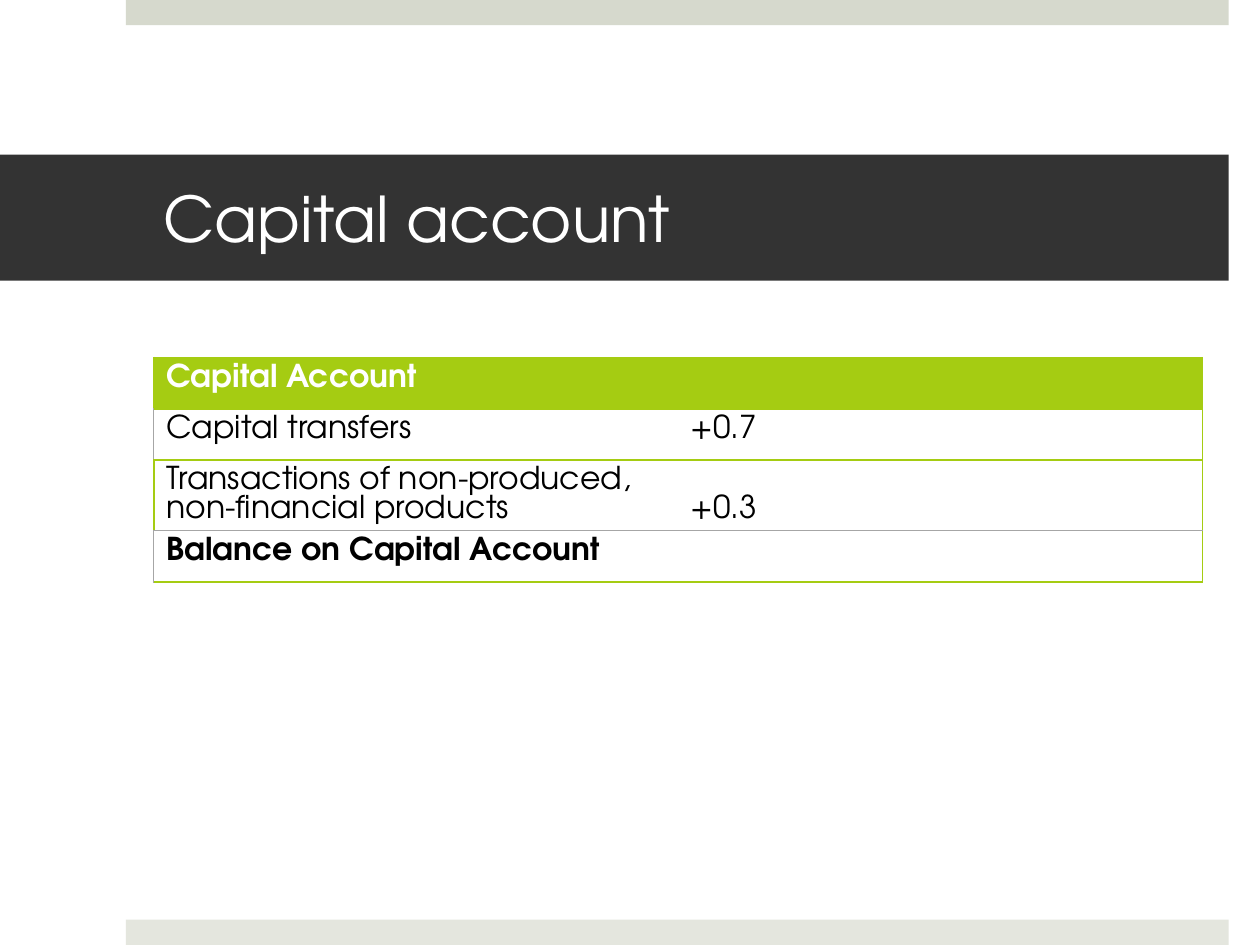
from lxml import etree
from pptx import Presentation
from pptx.dml.color import RGBColor
from pptx.enum.shapes import MSO_SHAPE
from pptx.enum.text import MSO_ANCHOR, PP_ALIGN
from pptx.oxml.ns import qn
from pptx.util import Cm, Pt

RECTANGLE = MSO_SHAPE.RECTANGLE
TOP, MIDDLE, BOTTOM = MSO_ANCHOR.TOP, MSO_ANCHOR.MIDDLE, MSO_ANCHOR.BOTTOM
LEFT = PP_ALIGN.LEFT

WHITE = RGBColor(0xFF, 0xFF, 0xFF)
BLACK = RGBColor(0x00, 0x00, 0x00)
CHARCOAL = RGBColor(0x33, 0x33, 0x33)
TOP_SAGE = RGBColor(0xD6, 0xD9, 0xCD)
BOTTOM_SAGE = RGBColor(0xE4, 0xE6, 0xDE)
LIME = RGBColor(0xA5, 0xCC, 0x12)
GREY = RGBColor(0xA6, 0xA6, 0xA6)

FONT = "TeX Gyre Adventor"
ACCOUNT_ROWS = [
    ("Capital Account", ""),
    ("Capital transfers", "+0.7"),
    ("Transactions of non-produced, non-financial products", "+0.3"),
    ("Balance on Capital Account", ""),
]
ROW_HEIGHTS = [1.03, 1.03, 1.43, 1.03]
LEFT_EDGES = [LIME, GREY, LIME, GREY]
ROW_EDGES = [LIME, LIME, LIME, GREY, LIME]


def style_text(paragraph, size, color, bold=False):
    paragraph.alignment = LEFT
    for run in paragraph.runs:
        run.font.name = FONT
        run.font.size = Pt(size)
        run.font.bold = bold
        run.font.color.rgb = color


def add_band(slide, left, top, width, height, color):
    band = slide.shapes.add_shape(RECTANGLE, Cm(left), Cm(top), Cm(width), Cm(height))
    band.shadow.inherit = False
    band.fill.solid()
    band.fill.fore_color.rgb = color
    band.line.fill.background()
    return band


def add_title(slide, left, top, width, height):
    title = add_band(slide, left, top, width, height, CHARCOAL).text_frame
    title.word_wrap = True
    title.vertical_anchor = MIDDLE
    title.margin_left, title.margin_right = Cm(3.3), Cm(0.76)
    title.text = "Capital account"
    style_text(title.paragraphs[0], 36, WHITE)


def set_borders(cell, edges):
    properties = cell._tc.get_or_add_tcPr()
    for position, (side, color) in enumerate(zip("LRTB", edges)):
        edge = etree.Element(qn(f"a:ln{side}"), w=str(Pt(1 if color == LIME else 0.5)))
        if color is None:
            etree.SubElement(edge, qn("a:noFill"))
        else:
            fill = etree.SubElement(edge, qn("a:solidFill"))
            etree.SubElement(fill, qn("a:srgbClr"), val=str(color))
        properties.insert(position, edge)


def fill_cell(cell, text, is_header, is_bold, anchor):
    cell.fill.solid()
    cell.fill.fore_color.rgb = LIME if is_header else WHITE
    cell.vertical_anchor = anchor
    cell.text_frame.text = text
    entry = cell.text_frame.paragraphs[0]
    entry.line_spacing = Pt(16.6)
    entry.font.size = Pt(18)
    style_text(entry, 18, WHITE if is_header else BLACK, is_bold)


def add_account_table(slide, left, top, width):
    account = slide.shapes.add_table(
        len(ACCOUNT_ROWS), 2, Cm(left), Cm(top), Cm(width), Cm(sum(ROW_HEIGHTS))
    ).table
    last = len(ACCOUNT_ROWS) - 1
    for column in account.columns:
        column.width = Cm(width / 2)
    for index, (entry, amount) in enumerate(ACCOUNT_ROWS):
        account.rows[index].height = Cm(ROW_HEIGHTS[index])
        label_cell, amount_cell = account.cell(index, 0), account.cell(index, 1)
        is_header = index == 0
        is_bold = index in (0, last)
        fill_cell(label_cell, entry, is_header, is_bold, TOP)
        fill_cell(amount_cell, amount, is_header, is_bold, BOTTOM if index == 2 else TOP)
        above_below = ROW_EDGES[index:index + 2]
        set_borders(label_cell, [LEFT_EDGES[index], None, *above_below])
        set_borders(amount_cell, [None, LIME, *above_below])


def main():
    presentation = Presentation()
    presentation.slide_width, presentation.slide_height = Cm(25.4), Cm(19.05)
    slide = presentation.slides.add_slide(presentation.slide_layouts[6])
    add_band(slide, 2.54, 0, 22.23, 0.51, TOP_SAGE)
    add_band(slide, 2.54, 18.54, 22.23, 0.51, BOTTOM_SAGE)
    add_title(slide, 0, 3.12, 24.77, 2.54)
    add_account_table(slide, 3.1, 7.21, 21.14)
    presentation.save("out.pptx")


if __name__ == "__main__":
    main()
